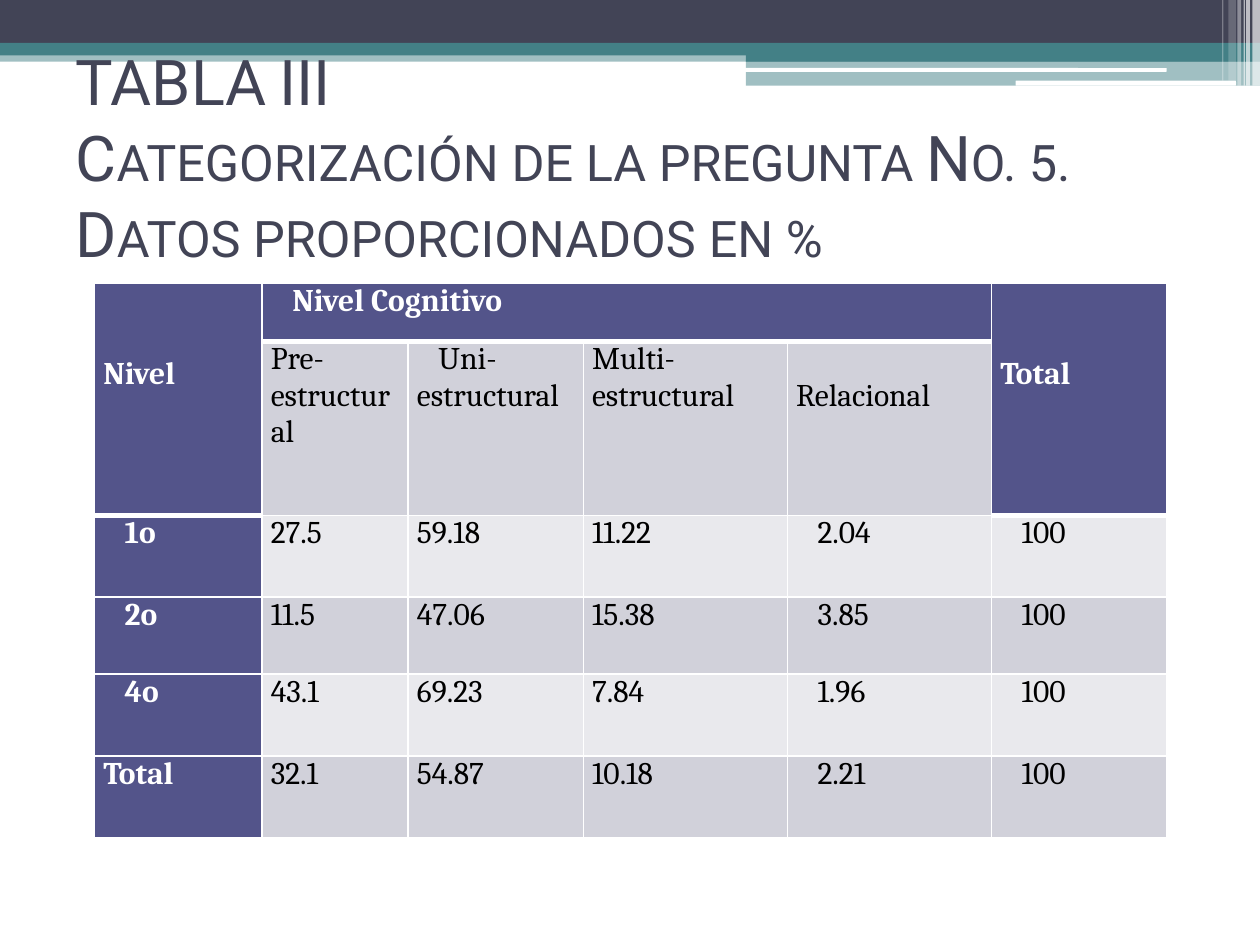
from dataclasses import dataclass

from lxml.etree import SubElement
from pptx import Presentation
from pptx.dml.color import RGBColor
from pptx.enum.shapes import MSO_SHAPE
from pptx.enum.text import MSO_ANCHOR, MSO_AUTO_SIZE, PP_ALIGN
from pptx.oxml import parse_xml
from pptx.oxml.ns import nsdecls, qn
from pptx.util import Inches, Pt


@dataclass(frozen=True)
class Theme:
    dark: str = "424456"
    teal: str = "438086"
    white: str = "FFFFFF"
    black: str = "000000"
    head: str = "53548A"
    bands: tuple = ("E9E9ED", "D1D1DA")
    title_font: str = "Roboto"
    table_font: str = "Cambria"
    title_size: int = 36
    table_size: int = 18


T = Theme()
UNIT = Inches(10) // 1000  # the slide is a grid of 1000 columns by 750 rows

# Left, top, width, height, colour, opacity in %
BARS = [
    (0, 40, 1000, 9, T.teal, 50),
    (0, 0, 1000, 34, T.dark, 100),
    (0, 34, 1000, 10, T.teal, 100),
    (592, 39, 408, 10, T.teal, 100),
    (592, 48, 408, 20, T.teal, 50),
]
ROUNDED = [(591, 54, 335, 3, T.white, 100), (806, 64, 175, 4, T.white, 100)]
STRIPES = [
    (994, 0, 6, 68, T.white, 65),
    (989, 0, 3, 68, T.white, 65),
    (987, 0, 1, 68, T.white, 60),
    (982, 0, 3, 68, T.white, 40),
    (975, 0, 6, 64, T.white, 20),
    (970, 0, 1, 64, T.white, 30),
]

COLS = (133, 116, 139, 162, 162, 139)
ROWS = (46, 138, 65, 61, 65, 65)
CELLS = [
    ["Nivel", "Nivel Cognitivo", None, None, None, "Total"],
    [None, "Pre-estructural", "Uni-estructural", "Multi- estructural",
     "Relacional", None],
    ["1o", "27.5", "59.18", "11.22", "2.04", "100"],
    ["2o", "11.5", "47.06", "15.38", "3.85", "100"],
    ["4o", "43.1", "69.23", "7.84", "1.96", "100"],
    ["Total", "32.1", "54.87", "10.18", "2.21", "100"],
]
LOWERED = {"Nivel": 58, "Relacional": 29}  # extra space above the text
INDENTED = {"Nivel Cognitivo", "Uni-estructural", "1o", "2o", "4o"}


def place(box, x, y, w, h):
    """Turn grid units inside a box into slide lengths."""
    return [UNIT * n for n in (box[0] + x, box[1] + y, w, h)]


def add_bar(s, box, kind, x, y, w, h, color, opacity):
    sp = s.shapes.add_shape(kind, *place(box, x, y, w, h))
    sp.shadow.inherit = False
    sp.line.fill.background()
    sp.fill.solid()
    sp.fill.fore_color.rgb = RGBColor.from_string(color)
    if opacity < 100:
        clr = sp.fill._xPr.find(qn("a:solidFill"))[0]
        SubElement(clr, qn("a:alpha")).set("val", str(opacity * 1000))


def add_banner(s, box):
    for kind, parts in ((MSO_SHAPE.RECTANGLE, BARS),
                        (MSO_SHAPE.ROUNDED_RECTANGLE, ROUNDED),
                        (MSO_SHAPE.RECTANGLE, STRIPES)):
        for part in parts:
            add_bar(s, box, kind, *part)


def style_run(r, font, size, color, bold=False):
    r.font.name = font
    r.font.size = Pt(size)
    r.font.bold = bold
    r.font.color.rgb = RGBColor.from_string(color)


def add_title(s, box):
    sp = s.shapes.title
    sp.left, sp.top, sp.width, sp.height = place(box, 0, 0, *box[2:])
    sp._element.getparent().append(sp._element)  # in front of the banner
    tf = sp.text_frame
    tf.word_wrap = True
    tf.auto_size = MSO_AUTO_SIZE.NONE
    tf.vertical_anchor = MSO_ANCHOR.BOTTOM
    tf.margin_bottom = UNIT * 28
    p = tf.paragraphs[0]
    p.text = ("TABLA III\vCategorización de la pregunta No. 5. "
              "Datos proporcionados en %")
    p.alignment = PP_ALIGN.LEFT
    for r in p.runs:
        style_run(r, T.title_font, T.title_size, T.dark)
        r.font._element.set("cap", "small")


def set_borders(cell, bottom):
    tc_pr = cell._tc.get_or_add_tcPr()
    for i, (side, width) in enumerate(zip("LRTB", (1, 1, 1, bottom))):
        tc_pr.insert(i, parse_xml(
            f'<a:ln{side} {nsdecls("a")} w="{Pt(width)}"><a:solidFill>'
            f'<a:srgbClr val="{T.white}"/></a:solidFill></a:ln{side}>'))


def fill_cell(cell, row, col, text):
    top_head = row == 0 or (row == 1 and col in (0, 5))
    head = top_head or col == 0
    cell.fill.solid()
    cell.fill.fore_color.rgb = RGBColor.from_string(
        T.head if head else T.bands[row % 2])
    set_borders(cell, 3 if top_head else 1)
    cell.margin_left = cell.margin_right = UNIT * 7
    cell.margin_top = cell.margin_bottom = 0
    if text is None:
        return
    lowered = LOWERED["Nivel"] if row == 0 and col == 5 else LOWERED.get(text, 0)
    cell.margin_top = UNIT * lowered
    p = cell.text_frame.paragraphs[0]
    p.text = text
    p.alignment = PP_ALIGN.JUSTIFY
    if text in INDENTED or (row > 1 and col > 3):
        p._p.get_or_add_pPr().set("indent", str(UNIT * 17))
    style_run(p.runs[0], T.table_font, T.table_size,
              T.white if head else T.black, head)


def add_results(s, box):
    frame = s.shapes.add_table(len(ROWS), len(COLS), *place(box, 0, 0, *box[2:]))
    table = frame.table
    for column, width in zip(table.columns, COLS):
        column.width = UNIT * width
    for line, height in zip(table.rows, ROWS):
        line.height = UNIT * height
    # Header cells that span rows or columns
    for first, last in (((0, 0), (1, 0)), ((0, 1), (0, 4)), ((0, 5), (1, 5))):
        table.cell(*first).merge(table.cell(*last))
    for i, texts in enumerate(CELLS):
        for j, text in enumerate(texts):
            fill_cell(table.cell(i, j), i, j, text)


def main():
    prs = Presentation()
    prs.slide_width, prs.slide_height = UNIT * 1000, UNIT * 750
    s = prs.slides.add_slide(prs.slide_layouts[5])
    add_banner(s, (0, 0, 1000, 68))
    add_title(s, (50, 125, 900, 117))
    add_results(s, (75, 225, sum(COLS), sum(ROWS)))
    prs.save("out.pptx")


if __name__ == "__main__":
    main()
